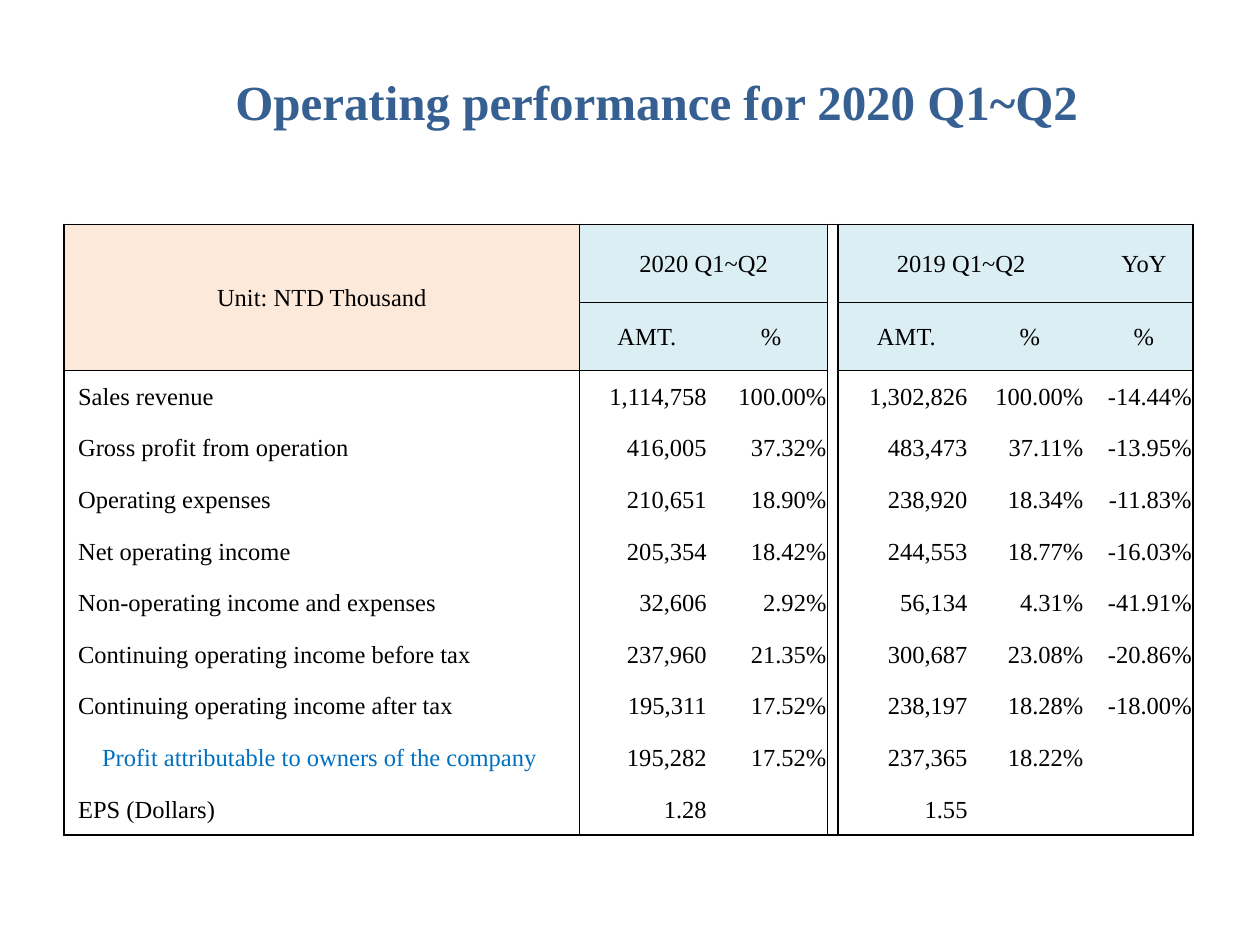
from lxml import etree
from pptx import Presentation
from pptx.dml.color import RGBColor
from pptx.enum.text import MSO_ANCHOR as Anchor, PP_ALIGN as Align
from pptx.oxml.ns import qn
from pptx.util import Inches, Pt

FONT = "Times New Roman"
COLORS = {"title": "376092", "text": "000000", "detail": "0070C0",
          "unit": "FDE9D9", "header": "DBEEF3", "line": "000000"}

COLUMN_WIDTHS = [4.09, 1.07, 0.9, 0.08, 1.09, 0.87, 0.08, 0.78]
HEADER_HEIGHTS = [0.62, 0.54]
BODY_HEIGHT = 0.41
AMOUNT_COLUMNS = (1, 4)
GAP_COLUMN = 3
VERTICAL_RULES = (0, 1, 3, 4, 8)

HEADERS = [
    ["Unit: NTD Thousand", "2020 Q1~Q2", "", "", "2019 Q1~Q2", "", "", "YoY"],
    ["", "AMT.", "%", "", "AMT.", "%", "", "%"],
]
DETAIL = "Profit attributable to owners of the company"
# Label, 2020 amount and share, 2019 amount and share, change
RESULTS = [
    ("Sales revenue", "1,114,758", "100.00%", "1,302,826", "100.00%", "-14.44%"),
    ("Gross profit from operation", "416,005", "37.32%", "483,473", "37.11%", "-13.95%"),
    ("Operating expenses", "210,651", "18.90%", "238,920", "18.34%", "-11.83%"),
    ("Net operating income", "205,354", "18.42%", "244,553", "18.77%", "-16.03%"),
    ("Non-operating income and expenses", "32,606", "2.92%", "56,134", "4.31%", "-41.91%"),
    ("Continuing operating income before tax", "237,960", "21.35%", "300,687", "23.08%", "-20.86%"),
    ("Continuing operating income after tax", "195,311", "17.52%", "238,197", "18.28%", "-18.00%"),
    (DETAIL, "195,282", "17.52%", "237,365", "18.22%", ""),
    ("EPS (Dollars)", "1.28", "", "1.55", "", ""),
]


def write_text(frame, text, size=14, color="text", bold=False, align=Align.LEFT):
    paragraph = frame.paragraphs[0]
    paragraph.alignment = align
    font = paragraph.font
    if text:
        run = paragraph.add_run()
        run.text = text
        font = run.font
    font.name = FONT
    font.size = Pt(size)
    font.bold = bold
    font.color.rgb = RGBColor.from_string(COLORS[color])


def add_title(slide, text):
    box = slide.shapes.add_textbox(Inches(1.77), Inches(0.52), Inches(6.96), Inches(0.57))
    box.text_frame.word_wrap = False
    write_text(box.text_frame, text, size=28, color="title", bold=True)


def has_horizontal_rule(edge, column, row_count):
    """Tell whether a line runs along a row edge, counted from the top."""
    if edge in (0, row_count):
        return True
    if edge == 1:
        return column not in (0, GAP_COLUMN)
    return edge == len(HEADERS) and column != GAP_COLUMN


def set_borders(cell, left, right, top, bottom):
    properties = cell._tc.get_or_add_tcPr()
    for tag, visible in (("a:lnL", left), ("a:lnR", right), ("a:lnT", top), ("a:lnB", bottom)):
        line = etree.SubElement(properties, qn(tag), w=str(Pt(1)))
        if visible:
            fill = etree.SubElement(line, qn("a:solidFill"))
            etree.SubElement(fill, qn("a:srgbClr"), val=COLORS["line"])
        else:
            etree.SubElement(line, qn("a:noFill"))


def fill_cell(cell, row, column):
    if row >= len(HEADERS) or column == GAP_COLUMN:
        cell.fill.background()
        return
    cell.fill.solid()
    name = "header" if column else "unit"
    cell.fill.fore_color.rgb = RGBColor.from_string(COLORS[name])


def format_cell(cell, row, column, text):
    cell.vertical_anchor = Anchor.MIDDLE
    cell.margin_left = cell.margin_right = cell.margin_top = Inches(0.01)
    cell.margin_bottom = 0
    align, color = Align.CENTER, "text"
    if row >= len(HEADERS):
        align = Align.RIGHT if column else Align.LEFT
        if column == 0:
            cell.margin_left = Inches(0.3 if text == DETAIL else 0.11)
            color = "detail" if text == DETAIL else "text"
        elif column in AMOUNT_COLUMNS:
            cell.margin_right = Inches(0.06)
    write_text(cell.text_frame, text, color=color, align=align)


def add_results_table(slide):
    rows = HEADERS + [
        [label, amount, share, "", old_amount, old_share, "", change]
        for label, amount, share, old_amount, old_share, change in RESULTS
    ]
    heights = HEADER_HEIGHTS + [BODY_HEIGHT] * len(RESULTS)
    table = slide.shapes.add_table(
        len(rows), len(COLUMN_WIDTHS), Inches(0.51), Inches(1.78),
        Inches(sum(COLUMN_WIDTHS)), Inches(sum(heights))).table
    table.first_row = table.horz_banding = False
    for column, width in zip(table.columns, COLUMN_WIDTHS):
        column.width = Inches(width)
    for row, height in zip(table.rows, heights):
        row.height = Inches(height)

    for r, texts in enumerate(rows):
        for c, text in enumerate(texts):
            cell = table.cell(r, c)
            set_borders(cell, c in VERTICAL_RULES, c + 1 in VERTICAL_RULES,
                        has_horizontal_rule(r, c, len(rows)),
                        has_horizontal_rule(r + 1, c, len(rows)))
            fill_cell(cell, r, c)
            format_cell(cell, r, c, text)

    table.cell(0, 0).merge(table.cell(1, 0))
    for column in AMOUNT_COLUMNS:
        table.cell(0, column).merge(table.cell(0, column + 1))


def main():
    presentation = Presentation()
    presentation.slide_width = Inches(10)
    presentation.slide_height = Inches(7.5)
    slide = presentation.slides.add_slide(presentation.slide_layouts[6])
    add_title(slide, "Operating performance for 2020 Q1~Q2")
    add_results_table(slide)
    presentation.save("out.pptx")


if __name__ == "__main__":
    main()
